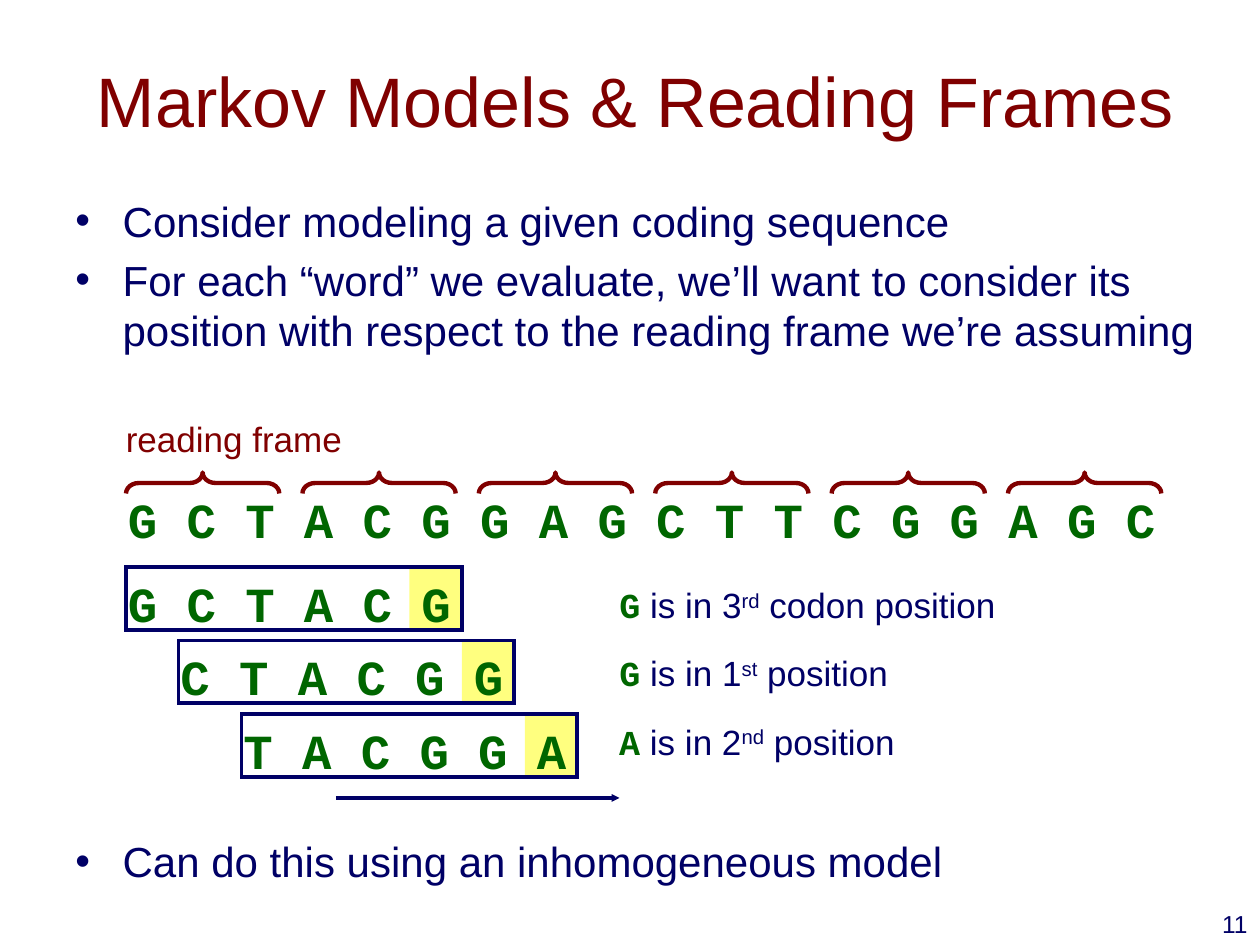
import pptx
import pptx.util
import pptx.dml.color
import pptx.enum.shapes
import pptx.enum.text
import pptx.oxml
import pptx.oxml.ns

# Lengths are columns and rows of a 120 by 90 grid on a 10 by 7.5 inch slide
CELL = pptx.util.Inches(10) // 120
COLORS = {"navy": "000066", "maroon": "800000", "green": "006600", "yellow": "FFFF00"}
SHAPE = pptx.enum.shapes.MSO_SHAPE
ALIGN = pptx.enum.text.PP_ALIGN
ANCHOR = pptx.enum.text.MSO_ANCHOR
FIT = pptx.enum.text.MSO_AUTO_SIZE
MONO = {"font": "Courier New", "color": "green", "bold": True}


def grid(*cells):
    return [round(cell * CELL) for cell in cells]


def hue(name):
    return pptx.dml.color.RGBColor.from_string(COLORS[name])


def add_xml(parent, tag, attrs=""):
    node = pptx.oxml.parse_xml(f"<a:{tag} {pptx.oxml.ns.nsdecls('a')} {attrs}/>")
    parent.append(node)


def style(run, size=20, font="Arial", color="navy", bold=False, raised=False):
    run.font.size = pptx.util.Pt(size)
    run.font.name = font
    run.font.bold = bold
    run.font.color.rgb = hue(color)
    if raised:
        run.font._element.set("baseline", "30000")


def write(frame, *paras, align=ALIGN.LEFT, bullet=False, wrap=True,
          anchor=ANCHOR.TOP, **look):
    """Each paragraph is a string or a list of (text, format) pairs."""
    frame.word_wrap = wrap
    frame.auto_size = FIT.NONE if wrap else FIT.SHAPE_TO_FIT_TEXT
    frame.vertical_anchor = anchor
    for i, runs in enumerate(paras):
        para = frame.paragraphs[0] if i == 0 else frame.add_paragraph()
        para.alignment = align
        if bullet:
            para.space_before = pptx.util.Pt(look["size"] * 0.2)
            props = para._p.get_or_add_pPr()
            props.set("marL", str(grid(4.5)[0]))
            props.set("indent", str(grid(-4.5)[0]))
            add_xml(props, "buFont", 'typeface="Arial"')
            add_xml(props, "buChar", 'char="•"')
        for text, extra in [(runs, {})] if isinstance(runs, str) else runs:
            run = para.add_run()
            run.text = text
            style(run, **{**look, **extra})


def add_text(slide, box, *paras, **look):
    write(slide.shapes.add_textbox(*grid(*box)).text_frame, *paras, **look)


def add_title(slide, text):
    title = slide.shapes.title
    title.left, title.top, title.width, title.height = grid(7, 2, 107, 15)
    write(title.text_frame, text, size=40, color="maroon",
          align=ALIGN.CENTER, anchor=ANCHOR.MIDDLE)


def add_shape(slide, kind, box, fill=None, line=None, width=2.25):
    shape = slide.shapes.add_shape(kind, *grid(*box))
    shape.shadow.inherit = False
    if fill:
        shape.fill.solid()
        shape.fill.fore_color.rgb = hue(fill)
    else:
        shape.fill.background()
    if line:
        shape.line.color.rgb = hue(line)
        shape.line.width = pptx.util.Pt(width)
    else:
        shape.line.fill.background()
    return shape


def add_brace(slide, mid, row, span, depth):
    box = (mid - depth / 2, row - span / 2, depth, span)
    brace = add_shape(slide, SHAPE.LEFT_BRACE, box, line="maroon", width=2.5)
    brace.rotation = 90
    brace.adjustments[0] = 0.61


def add_word(slide, col, row, word):
    """A framed word whose last base is marked."""
    mark = add_shape(slide, SHAPE.RECTANGLE, (col + 27, row, 5, 6), fill="yellow")
    color = mark.fill._xPr.find(".//" + pptx.oxml.ns.qn("a:srgbClr"))
    add_xml(color, "alpha", 'val="50000"')
    box = add_shape(slide, SHAPE.RECTANGLE, (col, row, 32, 6), line="navy")
    add_xml(box.line._get_or_add_ln(), "miter", 'lim="800000"')
    add_text(slide, (col - 1, row, 33.2, 6.8), " ".join(word), size=28, wrap=False, **MONO)


def add_note(slide, row, width, base, place, suffix, rest):
    runs = [(base, MONO), (f" is in {place}", {}), (suffix, {"raised": True}), (rest, {})]
    add_text(slide, (57.8, row, width, 5.2), runs, wrap=False)


def add_arrow(slide, start, end):
    arrow = slide.shapes.add_connector(
        pptx.enum.shapes.MSO_CONNECTOR.STRAIGHT, *grid(*start, *end))
    arrow.line.color.rgb = hue("navy")
    arrow.line.width = pptx.util.Pt(2.25)
    add_xml(arrow.line._get_or_add_ln(), "tailEnd", 'type="triangle" w="sm" len="sm"')
    add_xml(arrow._element.spPr, "effectLst")


def main():
    deck = pptx.Presentation()
    deck.slide_width, deck.slide_height = grid(120, 90)
    slide = deck.slides.add_slide(deck.slide_layouts[5])

    # Title and bullets
    add_title(slide, "Markov Models & Reading Frames")
    add_text(slide, (6, 18, 110, 22), "Consider modeling a given coding sequence",
             "For each “word” we evaluate, we’ll want to consider its position "
             "with respect to the reading frame we’re assuming", size=24, bullet=True)

    # Sequence with one brace per codon
    add_text(slide, (10.8, 39.2, 23, 5.2), "reading frame", color="maroon", wrap=False)
    for codon in range(6):
        add_brace(slide, 19.3 + 16.8 * codon, 46, span=14.6, depth=2)
    add_text(slide, (11, 46, 100.4, 6.8), " ".join("GCTACGGAGCTTCGGAGC"),
             size=28, wrap=False, **MONO)

    # Sliding words and the codon position of each last base
    words = [
        (12, "GCTACG", 55, 38.5, "3", "rd", " codon position"),
        (17, "CTACGG", 61.5, 28.5, "1", "st", " position"),
        (23, "TACGGA", 68, 29, "2", "nd", " position"),
    ]
    for i, (col, word, row, width, *note) in enumerate(words):
        add_word(slide, col, 54 + 7 * i, word)
        add_note(slide, row, width, word[-1], *note)
    add_arrow(slide, (32, 76), (59, 76))

    # Closing bullet and slide number
    add_text(slide, (6, 79, 102, 17), "Can do this using an inhomogeneous model",
             size=24, bullet=True)
    add_text(slide, (95, 86, 25, 6), "11", size=14, align=ALIGN.RIGHT)
    deck.save("out.pptx")


if __name__ == "__main__":
    main()
